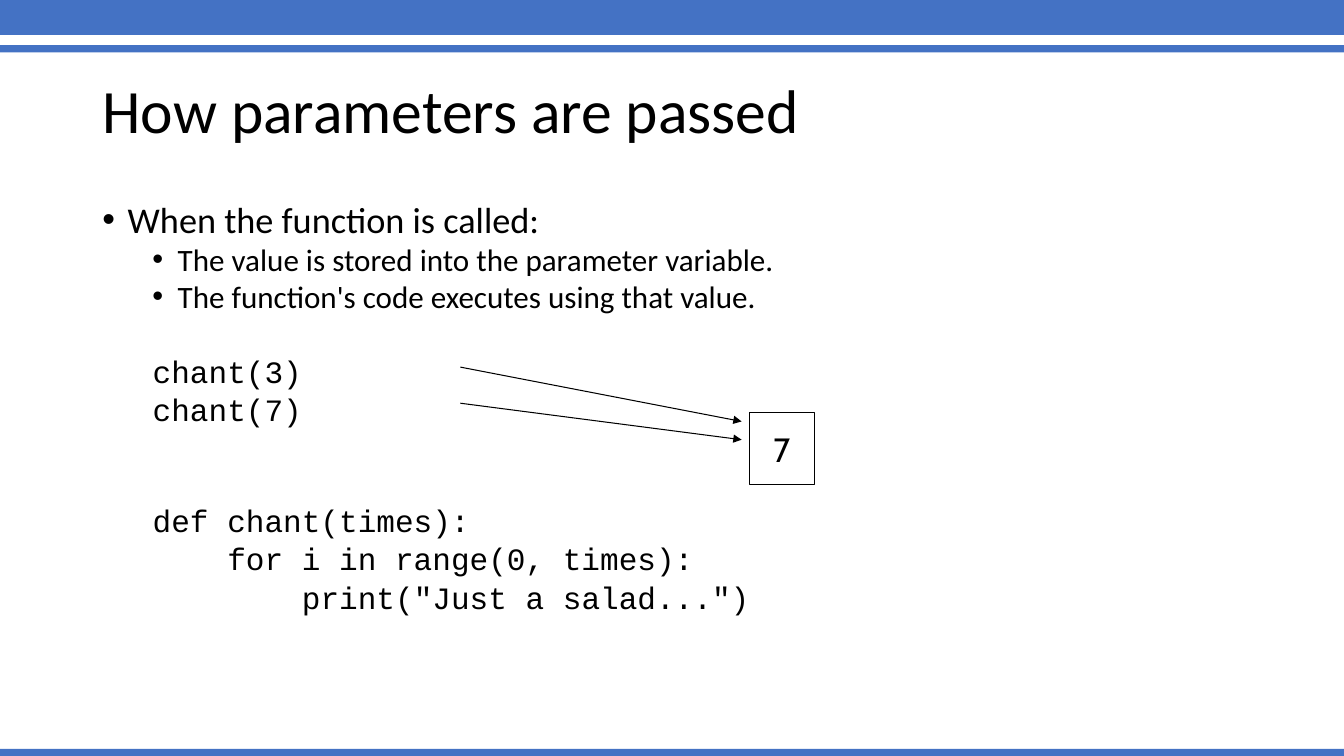
from pptx import Presentation
from pptx import util as u
from pptx.dml.color import RGBColor
from pptx.enum import shapes, text
from pptx.oxml.ns import qn
from lxml import etree

BLUE = RGBColor(0x44, 0x72, 0xC4)
BLACK = RGBColor(0, 0, 0)
WHITE = RGBColor(255, 255, 255)
WIDE, HIGH = 33.87, 19.05
SANS, MONO = "Calibri", "Courier New"
STEP = 1.88  # width of four code letters


def add_run(par, words, size, font):
    run = par.add_run()
    run.text = words
    run.font.size = u.Pt(size)
    run.font.name = font
    run.font.color.rgb = BLACK


def add_rect(slide, box, fill, line=None):
    rect = slide.shapes.add_shape(shapes.MSO_SHAPE.RECTANGLE, *map(u.Cm, box))
    rect.shadow.inherit = False
    rect.fill.solid()
    rect.fill.fore_color.rgb = fill
    if line is None:
        rect.line.fill.background()
    else:
        rect.line.color.rgb = line
        rect.line.width = u.Pt(0.75)
    return rect


def add_bars(slide):
    for top, height in ((0, 0.88), (1.14, 0.18), (HIGH - 0.18, 0.18)):
        add_rect(slide, (0, top, WIDE, height), BLUE)


def add_title(slide, box, words):
    title = slide.shapes.title
    title.left, title.top, title.width, title.height = map(u.Cm, box)
    frame = title.text_frame
    frame.vertical_anchor = text.MSO_ANCHOR.MIDDLE
    par = frame.paragraphs[0]
    par.alignment = text.PP_ALIGN.LEFT
    par.line_spacing = 0.9
    add_run(par, words, 44, SANS)


def set_indent(par, left, hang=0, bullet=False):
    props = par._p.get_or_add_pPr()
    props.set("marL", str(u.Cm(left)))
    props.set("indent", str(-u.Cm(hang)))
    if bullet:
        etree.SubElement(props, qn("a:buFont")).set("typeface", "Arial")
        etree.SubElement(props, qn("a:buChar")).set("char", "•")


def add_body(slide, box):
    frame = slide.shapes.add_textbox(*map(u.Cm, box)).text_frame
    frame.word_wrap = True
    # words, size, font, left indent, space before
    rows = (
        ("When the function is called:", 25.9, SANS, 0.64, 10),
        ("The value is stored into the parameter variable.", 22.2, SANS, 1.9, 5),
        ("The function's code executes using that value.", 22.2, SANS, 1.9, 5),
        ("chant(3)", 22.2, MONO, 1.27, 32),
        ("chant(7)", 22.2, MONO, 1.27, 6),
        ("def chant(times):", 22.2, MONO, 1.27, 58),
        ("for i in range(0, times):", 22.2, MONO, 1.27 + STEP, 6),
        ('print("Just a salad...")', 22.2, MONO, 1.27 + 2 * STEP, 6),
    )
    for i, (words, size, font, left, gap) in enumerate(rows):
        par = frame.add_paragraph() if i else frame.paragraphs[0]
        par.line_spacing = 0.8
        par.space_before = u.Pt(gap)
        listed = font == SANS
        set_indent(par, left, 0.64 if listed else 0, listed)
        add_run(par, words, size, font)


def add_arrow(slide, start, end):
    line = slide.shapes.add_connector(
        shapes.MSO_CONNECTOR.STRAIGHT, *map(u.Cm, start + end))
    line.line.color.rgb = BLACK
    line.line.width = u.Pt(0.75)
    etree.SubElement(line.line._get_or_add_ln(), qn("a:tailEnd")).set("type", "triangle")
    etree.SubElement(line._element.spPr, qn("a:effectLst"))


def add_value(slide, box, words):
    left, top, width, height = box
    # Box for the parameter variable
    cell = add_rect(slide, box, WHITE, BLACK)
    frame = cell.text_frame
    frame.word_wrap = False
    frame.vertical_anchor = text.MSO_ANCHOR.MIDDLE
    par = frame.paragraphs[0]
    par.alignment = text.PP_ALIGN.CENTER
    add_run(par, words, 24, "Cabin")
    # Arrows from both calls
    for rise, drop in ((-1.14, 0.23), (-0.23, 0.69)):
        add_arrow(slide, (left - 7.29, top + rise), (left - 0.2, top + drop))


def main():
    deck = Presentation()
    deck.slide_width, deck.slide_height = u.Cm(WIDE), u.Cm(HIGH)
    slide = deck.slides.add_slide(deck.slide_layouts[5])
    add_bars(slide)
    add_title(slide, (2.33, 1.01, 29.21, 3.68), "How parameters are passed")
    add_body(slide, (2.33, 5.07, 29.21, 12.09))
    add_value(slide, (18.89, 10.39, 1.63, 1.83), "7")
    deck.save("out.pptx")


if __name__ == "__main__":
    main()
